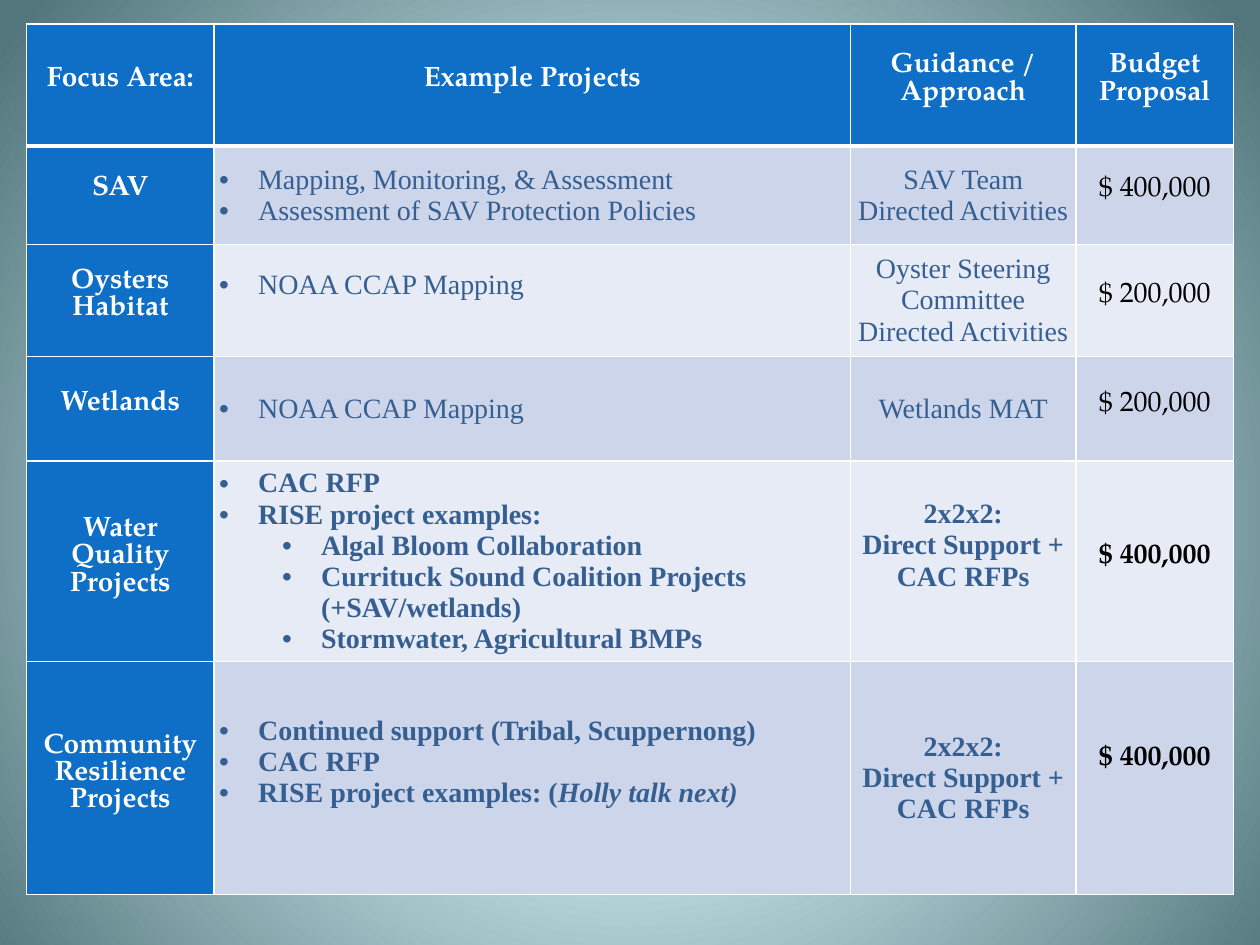
from dataclasses import dataclass

from pptx import Presentation, oxml
from pptx import util as u
from pptx.dml.color import RGBColor
from pptx.enum import text
from pptx.oxml import ns

WHITE = RGBColor(0xFF, 0xFF, 0xFF)
BLACK = RGBColor(0, 0, 0)
BLUE = RGBColor(0x0F, 0x6F, 0xC6)
NAVY = RGBColor(0x36, 0x5F, 0x91)
BAND_DARK = RGBColor(0xCC, 0xD5, 0xEA)
BAND_LIGHT = RGBColor(0xE7, 0xEB, 0xF5)
GLOW = [(0, RGBColor(0xDE, 0xFB, 0xFF)), (25, RGBColor(0xDD, 0xFA, 0xFF)),
        (100, RGBColor(0x52, 0x76, 0x7C))]

SERIF, TIMES = "TeX Gyre Pagella", "Times New Roman"
LABEL = {"name": SERIF, "size": u.Pt(16), "bold": True, "color": WHITE}
DETAIL = {"name": TIMES, "size": u.Pt(16), "bold": False, "color": NAVY}
PRICE = {"name": SERIF, "size": u.Pt(16), "bold": False, "color": BLACK}

COLUMNS = [1.49, 5.05, 1.79, 1.25]
ROWS = [0.97, 0.78, 0.89, 0.83, 1.59, 1.85]
HEADINGS = ["Focus Area:", "Example Projects", "Guidance / Approach", "Budget Proposal"]
SUPPORT = ["2x2x2:", "Direct Support + CAC RFPs"]


@dataclass
class FocusArea:
    name: str
    projects: list  # (level, text, optional italic ending)
    guidance: list
    budget: str
    bold: bool = False
    lifts: tuple = (0, 0, 0, 0)  # bottom margins that raise the centred text


AREAS = [
    FocusArea("SAV", [(0, "Mapping, Monitoring, & Assessment"),
                      (0, "Assessment of SAV Protection Policies")],
              ["SAV Team Directed Activities"], "$ 400,000", lifts=(0.1, 0, 0, 0.08)),
    FocusArea("Oysters Habitat", [(0, "NOAA CCAP Mapping")],
              ["Oyster Steering Committee Directed Activities"], "$ 200,000",
              lifts=(0.08, 0.25, 0, 0.06)),
    FocusArea("Wetlands", [(0, "NOAA CCAP Mapping")], ["Wetlands MAT"], "$ 200,000",
              lifts=(0.08, 0, 0, 0.06)),
    FocusArea("Water Quality Projects",
              [(0, "CAC RFP"), (0, "RISE project examples:"),
               (1, "Algal Bloom Collaboration"),
               (1, "Currituck Sound Coalition Projects (+SAV/wetlands)"),
               (1, "Stormwater, Agricultural BMPs")],
              SUPPORT, "$ 400,000", True, (0.06, 0, 0.25, 0.06)),
    FocusArea("Community Resilience Projects",
              [(0, "Continued support (Tribal, Scuppernong)"), (0, "CAC RFP"),
               (0, "RISE project examples: (", "Holly talk next)")],
              SUPPORT, "$ 400,000", True, (0.06, 0.25, 0, 0.3)),
]


class Page:
    def __init__(self, deck):
        self.slide = deck.slides.add_slide(deck.slide_layouts[6])

    def glow(self, stops):
        """Fill the background with a circular gradient rising from the bottom."""
        fill = self.slide.background.fill
        fill.solid()
        solid = self.slide.element.find(".//" + ns.qn("a:solidFill"))
        marks = "".join(f'<a:gs pos="{place * 1000}"><a:srgbClr val="{color}"/></a:gs>'
                        for place, color in stops)
        solid.getparent().replace(solid, oxml.parse_xml(
            f'<a:gradFill {ns.nsdecls("a")} rotWithShape="1"><a:gsLst>{marks}</a:gsLst>'
            '<a:path path="circle"><a:fillToRect l="10000" t="110000" r="10000" b="100000"/>'
            '</a:path></a:gradFill>'))

    def table(self, left, top, widths, heights):
        frame = self.slide.shapes.add_table(
            len(heights), len(widths), u.Inches(left), u.Inches(top),
            u.Inches(sum(widths)), u.Inches(sum(heights)))
        grid = frame.table
        grid.horz_banding = False
        for column, width in zip(grid.columns, widths):
            column.width = u.Inches(width)
        for row, height in zip(grid.rows, heights):
            row.height = u.Inches(height)
        return grid

    def cell(self, cell, fill, lift=0, top_line=1, bottom_line=1):
        cell.fill.solid()
        cell.fill.fore_color.rgb = fill
        layout = {"vertical_anchor": text.MSO_ANCHOR.MIDDLE,
                  "margin_left": u.Inches(0.04), "margin_right": u.Inches(0.04),
                  "margin_top": 0, "margin_bottom": u.Inches(lift)}
        for key, value in layout.items():
            setattr(cell, key, value)
        properties = cell._tc.get_or_add_tcPr()
        edges = [("L", 1), ("R", 1), ("T", top_line), ("B", bottom_line)]
        for place, (side, points) in enumerate(edges):
            properties.insert(place, oxml.parse_xml(
                f'<a:ln{side} {ns.nsdecls("a")} w="{u.Pt(points)}"><a:solidFill>'
                f'<a:srgbClr val="{WHITE}"/></a:solidFill></a:ln{side}>'))

    def span(self, para, words, style, italic=False):
        span = para.add_run()
        span.text = words
        for key, value in {**style, "italic": italic}.items():
            if key == "color":
                span.font.color.rgb = value
            else:
                setattr(span.font, key, value)

    def paragraphs(self, cell, count):
        frame = cell.text_frame
        return [frame.paragraphs[0]] + [frame.add_paragraph() for _ in range(count - 1)]

    def centred(self, cell, lines, style):
        for para, line in zip(self.paragraphs(cell, len(lines)), lines):
            para.alignment = text.PP_ALIGN.CENTER
            self.span(para, line, style)

    def bullets(self, cell, items, style):
        for para, (level, words, *ending) in zip(self.paragraphs(cell, len(items)), items):
            para.level = level
            properties = para._p.get_or_add_pPr()
            properties.set("marL", str(u.Inches(0.31 + 0.5 * level)))
            properties.set("indent", str(u.Inches(-0.31)))
            properties.append(oxml.parse_xml(
                f'<a:buFont {ns.nsdecls("a")} typeface="Arial"/>'))
            properties.append(oxml.parse_xml(f'<a:buChar {ns.nsdecls("a")} char="•"/>'))
            self.span(para, words, style)
            for phrase in ending:
                self.span(para, phrase, style, italic=True)


def main():
    deck = Presentation()
    deck.slide_width, deck.slide_height = u.Inches(10), u.Inches(7.5)
    page = Page(deck)
    page.glow(GLOW)
    grid = page.table(0.21, 0.19, COLUMNS, ROWS)

    for column, heading in enumerate(HEADINGS):
        cell = grid.cell(0, column)
        page.cell(cell, BLUE, lift=0.08, bottom_line=3)
        page.centred(cell, [heading], LABEL)

    for row, area in enumerate(AREAS, 1):
        band = BAND_DARK if row % 2 else BAND_LIGHT
        cells = [grid.cell(row, column) for column in range(len(COLUMNS))]
        for cell, fill, lift in zip(cells, [BLUE, band, band, band], area.lifts):
            page.cell(cell, fill, lift, top_line=3 if row == 1 else 1)
        detail = {**DETAIL, "bold": area.bold}
        page.centred(cells[0], [area.name], LABEL)
        page.bullets(cells[1], area.projects, detail)
        page.centred(cells[2], area.guidance, detail)
        page.centred(cells[3], [area.budget], {**PRICE, "bold": area.bold})

    deck.save("out.pptx")


if __name__ == "__main__":
    main()
